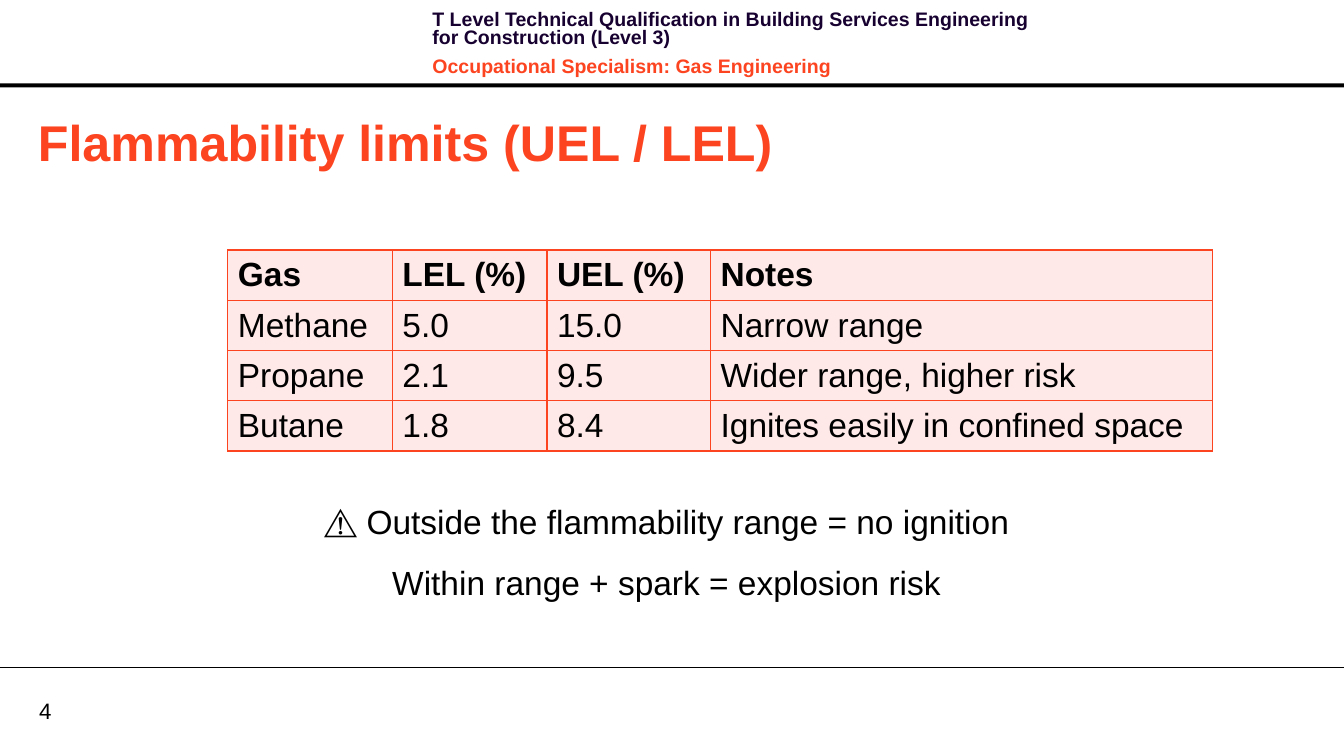
import pptx
import pptx.dml.color
import pptx.enum.shapes
import pptx.enum.text
import pptx.oxml
import pptx.oxml.ns
import pptx.util
from pptx.util import Inches

RGBColor = pptx.dml.color.RGBColor
ORANGE = RGBColor(0xFC, 0x44, 0x21)
NAVY = RGBColor(0x17, 0x01, 0x30)
PINK = RGBColor(0xFE, 0xE9, 0xE8)
BLACK = RGBColor(0, 0, 0)
ALIGN = pptx.enum.text.PP_ALIGN
ANCHOR = pptx.enum.text.MSO_ANCHOR
SLIDE_WIDTH, SLIDE_HEIGHT = 13.39, 7.48

GAS_LIMITS = [
    ["Gas", "LEL (%)", "UEL (%)", "Notes"],
    ["Methane", "5.0", "15.0", "Narrow range"],
    ["Propane", "2.1", "9.5", "Wider range, higher risk"],
    ["Butane", "1.8", "8.4", "Ignites easily in confined space"],
]
COLUMN_WIDTHS = [1.64, 1.54, 1.63, 5]
ROW_HEIGHT = 0.47


def apply(target, formats):
    for name, value in formats.items():
        setattr(target, name, value)


def style_font(paragraph, size, color, bold=False):
    apply(paragraph.font, {"name": "Arial", "size": pptx.util.Pt(size), "bold": bold})
    paragraph.font.color.rgb = color


def add_text(slide, box, lines, size, spacing=None, bold=False, frame_format=None):
    """Write (text, colour) lines in a box of left, top, width, height."""
    frame = slide.shapes.add_textbox(*map(Inches, box)).text_frame
    apply(frame, {"word_wrap": True, **(frame_format or {})})
    for index, (text, color) in enumerate(lines):
        paragraph = frame.paragraphs[0] if index == 0 else frame.add_paragraph()
        paragraph.text = text
        apply(paragraph, spacing or {})
        if index == 0:
            paragraph.space_before = pptx.util.Pt(0)
        style_font(paragraph, size, color, bold)


def add_header(slide, left, top, width, height):
    # Thick rule along the bottom of the header
    rule_height = 0.04
    rule = slide.shapes.add_shape(
        pptx.enum.shapes.MSO_SHAPE.RECTANGLE,
        *map(Inches, (left, top + height - rule_height, width, rule_height)))
    rule.shadow.inherit = False
    rule.fill.solid()
    rule.fill.fore_color.rgb = BLACK
    rule.line.fill.background()

    # Qualification and specialism
    gap = pptx.util.Pt(4)
    add_text(
        slide, (left + 4.21, top + 0.07, 6.37, 0.64),
        [("T Level Technical Qualification in Building Services Engineering "
          "for Construction (Level 3)", NAVY),
         ("Occupational Specialism: Gas Engineering", ORANGE)],
        14, {"line_spacing": pptx.util.Pt(13.1), "space_before": gap, "space_after": gap},
        bold=True)


def add_footer(slide, left, top, width):
    # Thin rule
    rule = slide.shapes.add_connector(
        pptx.enum.shapes.MSO_CONNECTOR.STRAIGHT,
        *map(Inches, (left, top, left + width, top)))
    rule.line.color.rgb = BLACK
    rule.line.width = pptx.util.Pt(0.75)
    properties = rule._element.spPr
    properties.append(pptx.oxml.parse_xml(
        "<a:effectLst %s/>" % pptx.oxml.ns.nsdecls("a")))

    # Page number
    margins = dict.fromkeys(
        ("margin_left", "margin_top", "margin_right", "margin_bottom"), 0)
    add_text(slide, (left + 0.39, top + 0.29, 0.64, 0.27), [("4", BLACK)], 16,
             frame_format={**margins, "vertical_anchor": ANCHOR.MIDDLE})


def add_cell_borders(cell):
    properties = cell._tc.get_or_add_tcPr()
    for position, side in enumerate(("lnL", "lnR", "lnT", "lnB")):
        properties.insert(position, pptx.oxml.parse_xml(
            f'<a:{side} {pptx.oxml.ns.nsdecls("a")} w="12700"><a:solidFill>'
            f'<a:srgbClr val="{ORANGE}"/></a:solidFill></a:{side}>'))


def add_limits_table(slide, left, top):
    size = (sum(COLUMN_WIDTHS), ROW_HEIGHT * len(GAS_LIMITS))
    limits = slide.shapes.add_table(
        len(GAS_LIMITS), len(COLUMN_WIDTHS), *map(Inches, (left, top, *size))).table
    for column, width in zip(limits.columns, COLUMN_WIDTHS):
        column.width = Inches(width)
    for row_index, values in enumerate(GAS_LIMITS):
        for column_index, value in enumerate(values):
            cell = limits.cell(row_index, column_index)
            apply(cell, {"text": value, "vertical_anchor": ANCHOR.MIDDLE})
            cell.fill.solid()
            cell.fill.fore_color.rgb = PINK
            add_cell_borders(cell)
            style_font(cell.text_frame.paragraphs[0], 24, BLACK, bold=row_index == 0)


def add_content(slide, left, top, width):
    # Title
    add_text(slide, (left, top, width, 0.71),
             [("Flammability limits (UEL / LEL)", ORANGE)], 36, bold=True,
             frame_format={"vertical_anchor": ANCHOR.MIDDLE})

    # Gas limits
    add_limits_table(slide, left + 1.99, top + 1.44)

    # Ignition warning
    add_text(slide, (left, top + 3.9, width, 1.3),
             [("⚠️ Outside the flammability range = no ignition", BLACK),
              ("Within range + spark = explosion risk", BLACK)], 24,
             {"alignment": ALIGN.CENTER, "line_spacing": 1.1,
              "space_after": pptx.util.Pt(12)},
             frame_format={"margin_left": 0, "margin_right": 0, "margin_top": 0})


def main():
    deck = pptx.Presentation()
    apply(deck, {"slide_width": Inches(SLIDE_WIDTH), "slide_height": Inches(SLIDE_HEIGHT)})
    slide = deck.slides.add_slide(deck.slide_layouts[6])
    add_header(slide, 0, 0, SLIDE_WIDTH, 0.87)
    add_content(slide, 0.28, 1.05, 12.72)
    add_footer(slide, 0, 6.65, SLIDE_WIDTH)
    deck.save("out.pptx")


if __name__ == "__main__":
    main()
